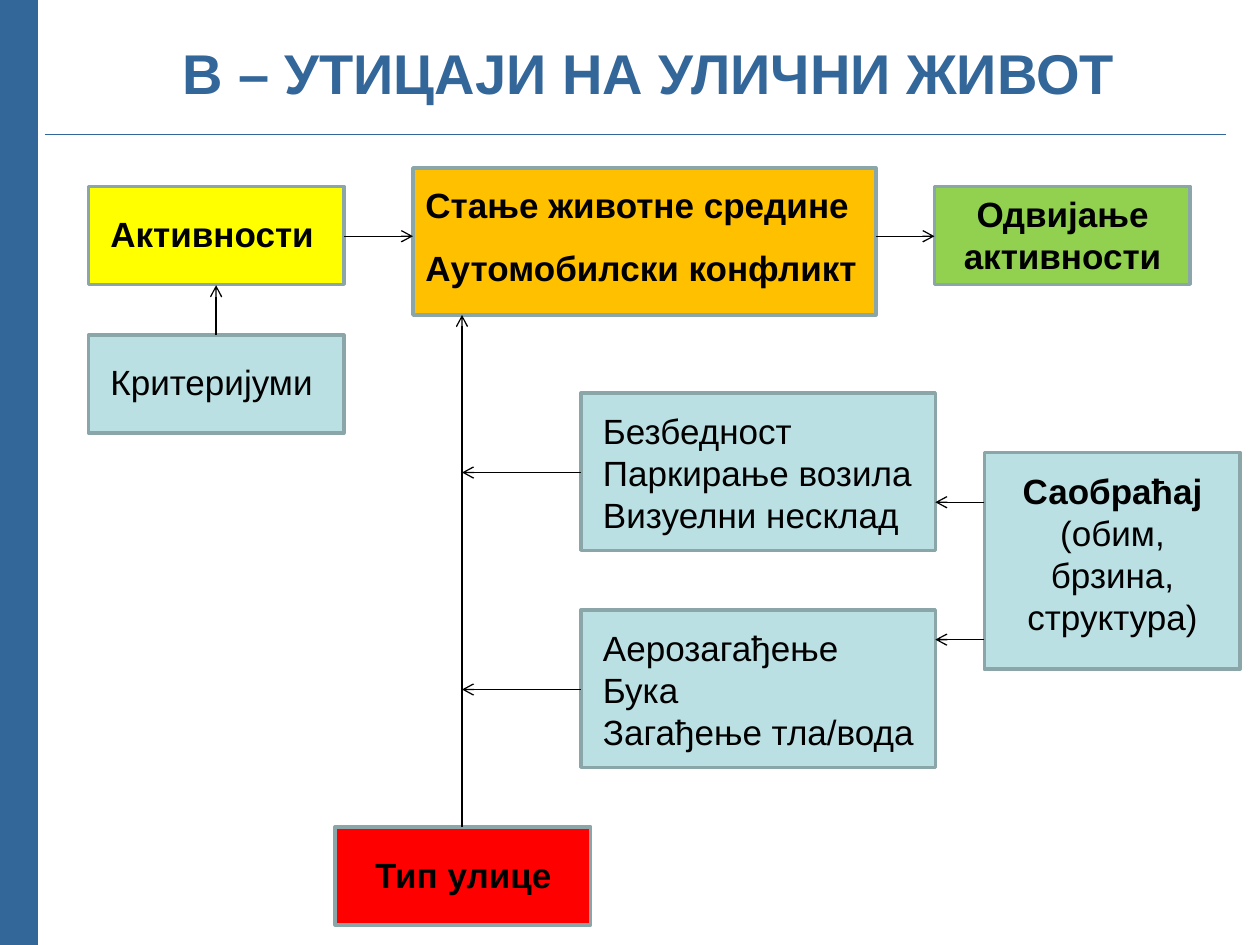
"""Build a slide with a flow diagram of the influences on street life."""
from typing import NamedTuple

from lxml import etree
from pptx import Presentation
from pptx.dml.color import RGBColor
from pptx.enum import shapes, text
from pptx.oxml import ns
from pptx.util import Pt

FONT = "Arial"
BLUE, BLACK, EDGE, PALE = "336699", "000000", "8AA6A8", "BBE0E3"
LEFT, CENTER = text.PP_ALIGN.LEFT, text.PP_ALIGN.CENTER


class Run(NamedTuple):
    text: str
    bold: bool = False


class Box(NamedTuple):
    x: float
    y: float
    w: float
    h: float
    fill: str
    paragraphs: list[list[Run]]
    label_dy: float
    label_h: float
    label_dx: float = 5.5
    label_w: float = 135.5
    align: text.PP_ALIGN = LEFT
    gap: float = 0


class Line(NamedTuple):
    x1: float
    y1: float
    x2: float
    y2: float
    color: str = BLACK
    width: float = 0.75
    arrow: bool = True


BOXES = [
    Box(50.5, 106.5, 146, 56, "FFFF00", [[Run("Активности", True)]], 11.5, 31.5),
    Box(50.5, 191.5, 146, 56, PALE, [[Run("Критеријуми")]], 11, 31.5),
    Box(236, 96, 264.5, 84, "FFC000",
        [[Run("Стање животне средине", True)], [Run("Аутомобилски конфликт", True)]],
        5.5, 67.5, label_dx=0, label_w=264.5, gap=6),
    Box(534, 106.5, 146, 56, "92D050", [[Run("Одвијање активности", True)]],
        0, 55.5, align=CENTER),
    Box(332, 224.5, 202.5, 90, PALE,
        [[Run("Безбедност")], [Run("Паркирање возила")], [Run("Визуелни несклад")]],
        6, 80, label_w=208),
    Box(332, 348.5, 202.5, 90, PALE,
        [[Run("Аерозагађење")], [Run("Бука")], [Run("Загађење тла/вода")]],
        6, 80, label_w=208),
    Box(562.5, 258.5, 146, 124, PALE,
        [[Run("Саобраћај", True), Run(" (обим, брзина, структура)")]],
        6, 104.5, align=CENTER),
    Box(191.5, 472.5, 146, 56, "FF0000", [[Run("Тип улице", True)]],
        11.5, 31.5, align=CENTER),
]

RULES = [
    Line(1.5, 0, 1.5, 540, BLUE, 40, False),
    Line(25.5, 77, 700.5, 77, BLUE, 0.75, False),
]

ARROWS = [
    Line(264, 472.5, 264, 180),
    Line(332, 270, 264, 270),
    Line(332, 394, 264, 394),
    Line(123.5, 191.5, 123.5, 163),
    Line(196.5, 135, 236, 135),
    Line(500.5, 135, 534, 135),
    Line(562.5, 287, 534.5, 287),
    Line(562.5, 365.5, 534.5, 365.5),
]


def rgb(value: str) -> RGBColor:
    return RGBColor.from_string(value)


def add_run(p, run: Run, size: float = 20, color: str = BLACK) -> None:
    r = p.add_run()
    r.text = run.text
    r.font.name, r.font.size, r.font.bold = FONT, Pt(size), run.bold
    r.font.color.rgb = rgb(color)


def add_title(s, title: str) -> None:
    sp = s.shapes.title
    sp.left, sp.top, sp.width, sp.height = Pt(16.5), Pt(0), Pt(708.5), Pt(90)
    tf = sp.text_frame
    tf.word_wrap = True
    tf.vertical_anchor = text.MSO_ANCHOR.MIDDLE
    p = tf.paragraphs[0]
    p.alignment, p.line_spacing = CENTER, 0.8
    add_run(p, Run(title, True), 32, BLUE)


def add_box(s, box: Box) -> None:
    sp = s.shapes.add_shape(shapes.MSO_SHAPE.RECTANGLE,
                            Pt(box.x), Pt(box.y), Pt(box.w), Pt(box.h))
    sp.shadow.inherit = False
    sp.fill.solid()
    sp.fill.fore_color.rgb = rgb(box.fill)
    sp.line.color.rgb, sp.line.width = rgb(EDGE), Pt(2)

    label = s.shapes.add_textbox(Pt(box.x + box.label_dx), Pt(box.y + box.label_dy),
                                 Pt(box.label_w), Pt(box.label_h))
    tf = label.text_frame
    tf.word_wrap = True
    tf.auto_size = text.MSO_AUTO_SIZE.SHAPE_TO_FIT_TEXT
    for i, runs in enumerate(box.paragraphs):
        p = tf.add_paragraph() if i else tf.paragraphs[0]
        p.alignment = box.align
        p.space_before = p.space_after = Pt(box.gap)
        for run in runs:
            add_run(p, run)


def add_line(s, line: Line) -> None:
    sp = s.shapes.add_connector(shapes.MSO_CONNECTOR.STRAIGHT,
                                Pt(line.x1), Pt(line.y1), Pt(line.x2), Pt(line.y2))
    sp.line.color.rgb, sp.line.width = rgb(line.color), Pt(line.width)
    if line.arrow:
        ln = sp.line._get_or_add_ln()
        etree.SubElement(ln, ns.qn("a:tailEnd"), type="arrow")
    etree.SubElement(sp._element.spPr, ns.qn("a:effectLst"))


def main() -> None:
    prs = Presentation()
    prs.slide_width, prs.slide_height = Pt(720), Pt(540)
    s = prs.slides.add_slide(prs.slide_layouts[5])
    add_title(s, "В – УТИЦАЈИ НА УЛИЧНИ ЖИВОТ")
    for rule in RULES:
        add_line(s, rule)
    for box in BOXES:
        add_box(s, box)
    for arrow in ARROWS:
        add_line(s, arrow)
    prs.save("out.pptx")


if __name__ == "__main__":
    main()
